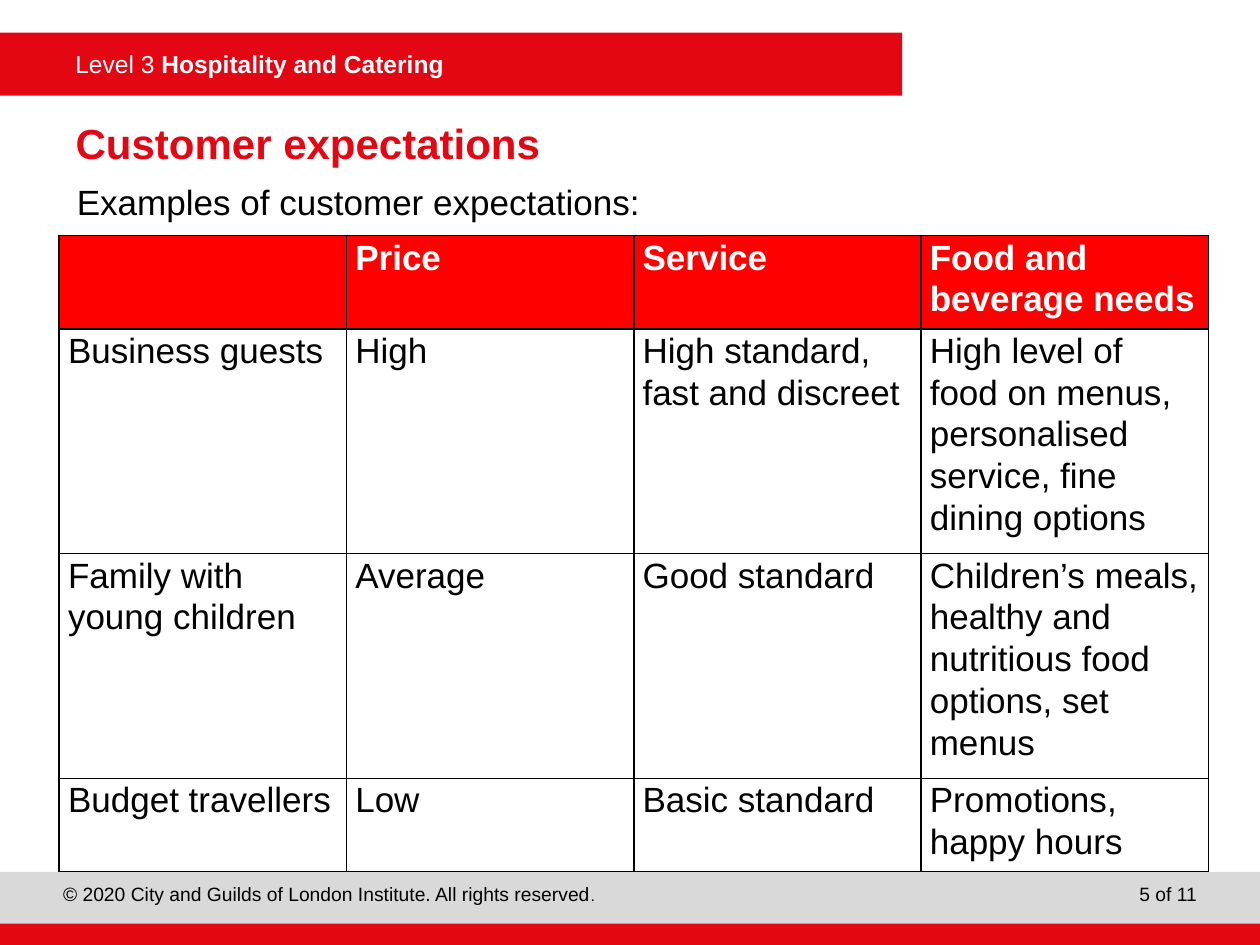
from dataclasses import dataclass

from lxml.etree import SubElement
from pptx import Presentation
from pptx.dml.color import RGBColor
from pptx.enum.shapes import MSO_SHAPE as Shape
from pptx.enum.text import MSO_ANCHOR as Anchor, MSO_AUTO_SIZE as AutoSize, PP_ALIGN as Align
from pptx.oxml.ns import qn
from pptx.util import Inches, Pt

COLORS = {"red": "E30613", "header": "FF0000", "grey": "D9D9D9",
          "white": "FFFFFF", "black": "000000"}


@dataclass
class Band:
    left: float
    top: float
    width: float
    height: float
    color: str


@dataclass
class Span:
    text: str
    size: float
    color: str = "black"
    bold: bool = False


@dataclass
class Label:
    left: float
    top: float
    width: float
    height: float
    spans: list[Span]
    align: Align = Align.LEFT
    margin_x: float = 0
    margin_y: float = 0


BANDS = [
    Band(0, 0.26, 7.16, 0.5, "red"),
    Band(0, 6.92, 10, 0.42, "grey"),
    Band(0, 7.33, 10, 0.17, "red"),
]
LABELS = [
    Label(0.5, 0.34, 6.66, 0.34,
          [Span("Level 3 ", 14, "white"),
           Span("Hospitality and Catering", 14, "white", True)],
          margin_x=0.1, margin_y=0.05),
    Label(0.5, 7, 7.08, 0.25,
          [Span("© 2020 City and Guilds of London Institute. All rights reserved", 11),
           Span(".", 9)]),
    Label(7.92, 7, 1.58, 0.25, [Span("5 of 11", 11)], Align.RIGHT),
]
EXPECTATIONS = [
    ["", "Price", "Service", "Food and beverage needs"],
    ["Business guests", "High", "High standard, fast and discreet",
     "High level of food on menus, personalised service, fine dining options"],
    ["Family with young children", "Average", "Good standard",
     "Children’s meals, healthy and nutritious food options, set menus"],
    ["Budget travellers", "Low", "Basic standard", "Promotions, happy hours"],
]
ROW_HEIGHTS = [0.74, 1.5, 1.4, 0.74]
COLUMN_WIDTH = 2.28


def rgb(name: str) -> RGBColor:
    return RGBColor.from_string(COLORS[name])


def set_all(target, values: dict) -> None:
    for name, value in values.items():
        setattr(target, name, value)


def place(shape, left: float, top: float, width: float, height: float) -> None:
    set_all(shape, {"left": Inches(left), "top": Inches(top),
                    "width": Inches(width), "height": Inches(height)})


def write(para, spans: list[Span]) -> None:
    for span in spans:
        run = para.add_run()
        run.text = span.text
        set_all(run.font, {"name": "Arial", "size": Pt(span.size), "bold": span.bold})
        run.font.color.rgb = rgb(span.color)


def draw_band(page, band: Band) -> None:
    shape = page.shapes.add_shape(
        Shape.RECTANGLE, *map(Inches, (band.left, band.top, band.width, band.height)))
    shape.shadow.inherit = False
    shape.fill.solid()
    shape.fill.fore_color.rgb = rgb(band.color)
    shape.line.fill.background()


def draw_label(page, label: Label) -> None:
    box = page.shapes.add_textbox(
        *map(Inches, (label.left, label.top, label.width, label.height)))
    margin_x, margin_y = Inches(label.margin_x), Inches(label.margin_y)
    set_all(box.text_frame, {"word_wrap": True,
                             "margin_left": margin_x, "margin_right": margin_x,
                             "margin_top": margin_y, "margin_bottom": margin_y})
    para = box.text_frame.paragraphs[0]
    para.alignment = label.align
    write(para, label.spans)


def add_borders(cell) -> None:
    """Put a thin black line on each side; call before the cell is filled."""
    properties = cell._tc.get_or_add_tcPr()
    for side in ("a:lnL", "a:lnR", "a:lnT", "a:lnB"):
        line = SubElement(properties, qn(side), w=str(Pt(1)))
        fill = SubElement(line, qn("a:solidFill"))
        SubElement(fill, qn("a:srgbClr"), val=COLORS["black"])


def draw_table(page) -> None:
    columns = len(EXPECTATIONS[0])
    frame = page.shapes.add_table(
        len(EXPECTATIONS), columns, Inches(0.47), Inches(1.87),
        Inches(COLUMN_WIDTH * columns), Inches(sum(ROW_HEIGHTS)))
    table = frame.table
    set_all(table, {"first_row": False, "horz_banding": False})
    for column in table.columns:
        column.width = Inches(COLUMN_WIDTH)
    for index, (row, texts) in enumerate(zip(table.rows, EXPECTATIONS)):
        row.height = Inches(ROW_HEIGHTS[index])
        is_header = index == 0
        for cell, text in zip(row.cells, texts):
            set_all(cell, {"margin_left": Inches(0.07), "margin_right": Inches(0.07),
                           "margin_top": 0, "margin_bottom": 0})
            add_borders(cell)
            if is_header:
                cell.fill.solid()
                cell.fill.fore_color.rgb = rgb("header")
            else:
                cell.fill.background()
            if text:
                para = cell.text_frame.paragraphs[0]
                para.line_spacing = 1.07
                write(para, [Span(text, 20, "white" if is_header else "black", is_header)])
    frame.height = Inches(4.99)


def fill_placeholders(page) -> None:
    title, body = page.shapes.title, page.placeholders[1]
    place(title, 0.5, 0.92, 8.99, 0.42)
    set_all(title.text_frame, {"vertical_anchor": Anchor.MIDDLE, "auto_size": AutoSize.NONE})
    heading = title.text_frame.paragraphs[0]
    heading.alignment = Align.LEFT
    write(heading, [Span("Customer expectations", 24, "red", True)])

    place(body, 0.51, 1.38, 9, 5.44)
    body.text_frame.auto_size = AutoSize.NONE
    para = body.text_frame.paragraphs[0]
    properties = para._p.get_or_add_pPr()
    properties.set("marL", "0")
    properties.set("indent", "0")
    SubElement(properties, qn("a:buNone"))
    set_all(para, {"line_spacing": Pt(24), "space_before": Pt(0), "space_after": Pt(5)})
    write(para, [Span("Examples of customer expectations:", 20)])


def main() -> None:
    deck = Presentation()
    set_all(deck, {"slide_width": Inches(10), "slide_height": Inches(7.5)})
    page = deck.slides.add_slide(deck.slide_layouts[1])
    for band in BANDS:
        draw_band(page, band)
    for label in LABELS:
        draw_label(page, label)
    fill_placeholders(page)
    draw_table(page)
    deck.save("out.pptx")


if __name__ == "__main__":
    main()
